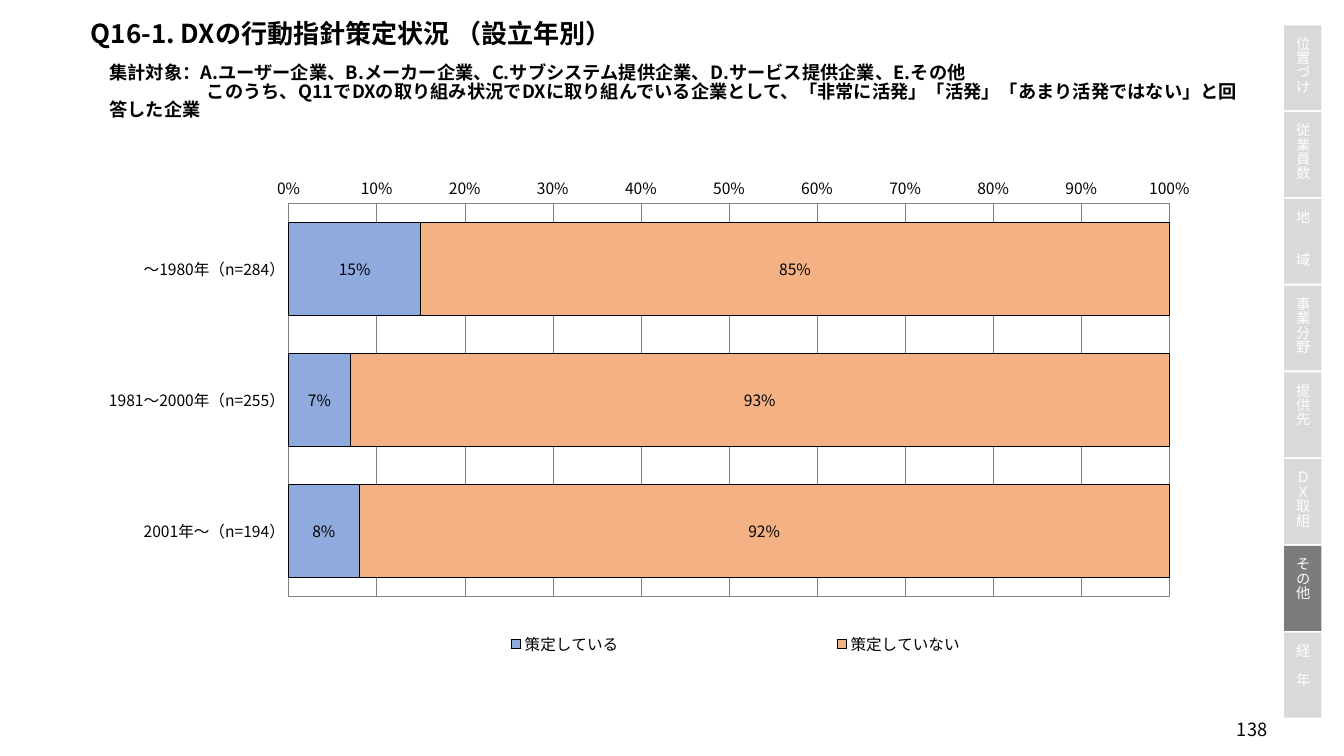
import pptx
import pptx.util
import pptx.chart.data
import pptx.dml.color
import pptx.enum.chart
import pptx.enum.shapes
import pptx.enum.text
import pptx.oxml
from lxml import etree
from pptx.oxml.ns import qn

FONT = "Noto Sans CJK JP"
In, Pt = pptx.util.Inches, pptx.util.Pt
ALIGN = pptx.enum.text.PP_ALIGN
ANCHOR = pptx.enum.text.MSO_ANCHOR
W, H = 14.35, 8.07
LEFT, BODY_W = 0.87, 12.6


def rgb(value):
    return pptx.dml.color.RGBColor.from_string(value)


def set_font(font, size, color="000000", bold=False):
    """Format Latin and East Asian text alike."""
    font.size, font.bold = Pt(size), bold
    font.color.rgb = rgb(color)
    font.name = FONT
    ea = etree.Element(qn("a:ea"), typeface=FONT)
    font._rPr.find(qn("a:latin")).addnext(ea)


def write(tf, text, size=14, color="000000", bold=False, align=ALIGN.LEFT,
          anchor=ANCHOR.TOP, spacing=None, left=0, indents=None):
    """Fill a frame, one paragraph a line; indents are first-line indents."""
    tf.word_wrap = True
    tf.vertical_anchor = anchor
    for i, line in enumerate(text.split("\n")):
        p = tf.add_paragraph() if i else tf.paragraphs[0]
        p.alignment = align
        p.line_spacing = spacing
        if indents:
            pPr = p._p.get_or_add_pPr()
            pPr.set("marL", str(In(left)))
            pPr.set("indent", str(In(indents[i])))
        r = p.add_run()
        r.text = line
        set_font(r.font, size, color, bold)


def add_text(s, box, text, **fmt):
    sp = s.shapes.add_textbox(*map(In, box))
    write(sp.text_frame, text, **fmt)


def add_side_tabs(s, box, labels, current):
    x, y, w, h = box
    gap = 0.02
    pitch = (h + gap) / len(labels)
    for i, label in enumerate(labels):
        sp = s.shapes.add_shape(pptx.enum.shapes.MSO_SHAPE.RECTANGLE, In(x),
                                In(y + i * pitch), In(w), In(pitch - gap))
        sp.shadow.inherit = False
        sp.fill.solid()
        sp.fill.fore_color.rgb = rgb("7C7C7C" if label == current else "D9D9D9")
        sp.line.fill.background()
        tf = sp.text_frame
        tf.margin_left = tf.margin_right = 0
        tf.margin_top = tf.margin_bottom = In(0.12)
        write(tf, label, size=11, color="FFFFFF", align=ALIGN.CENTER,
              anchor=ANCHOR.MIDDLE)
        tf._txBody.bodyPr.set("vert", "eaVert")


def make_layout(x, y, w, h, inner=False):
    """Manual chart layout in shares of the chart's size."""
    layout = etree.Element(qn("c:layout"))
    manual = etree.SubElement(layout, qn("c:manualLayout"))
    items = [("layoutTarget", "inner")] if inner else []
    items += [("xMode", "edge"), ("yMode", "edge"),
              ("x", x), ("y", y), ("w", w), ("h", h)]
    for tag, val in items:
        etree.SubElement(manual, qn("c:" + tag), val=str(val))
    return layout


def drop_layout(parent):
    for old in parent.findall(qn("c:layout")):
        parent.remove(old)


def set_line(line, color, width):
    line.color.rgb = rgb(color)
    line.width = Pt(width)


def add_share_chart(s, box, categories, series):
    enum = pptx.enum.chart
    data = pptx.chart.data.CategoryChartData(number_format="0%")
    data.categories = categories
    for name, _, values in series:
        data.add_series(name, values)
    chart = s.shapes.add_chart(enum.XL_CHART_TYPE.BAR_STACKED,
                               *map(In, box), data).chart
    set_font(chart.font, 12)
    chart.has_title = False

    plot = chart.plots[0]
    plot.gap_width, plot.overlap = 40, 100
    plot.vary_by_categories = False
    for ser, (_, color, _) in zip(plot.series, series):
        ser.format.fill.solid()
        ser.format.fill.fore_color.rgb = rgb(color)
        set_line(ser.format.line, "000000", 0.75)
        labels = ser.data_labels
        labels.show_value = True
        labels.number_format, labels.number_format_is_linked = "0%", False
        labels.position = enum.XL_LABEL_POSITION.CENTER
        set_font(labels.font, 12)

    cat, val = chart.category_axis, chart.value_axis
    for axis in (cat, val):
        axis.major_tick_mark = axis.minor_tick_mark = enum.XL_TICK_MARK.NONE
        set_font(axis.tick_labels.font, 12)
    cat.reverse_order = True
    set_line(cat.format.line, "808080", 1)
    val.minimum_scale, val.maximum_scale, val.major_unit = 0, 1, 0.1
    val.tick_labels.number_format = "0%"
    val.tick_labels.number_format_is_linked = False
    val.format.line.fill.background()
    val.has_major_gridlines = True
    set_line(val.major_gridlines.format.line, "808080", 0.25)

    chart.has_legend = True
    legend = chart.legend
    legend.position = enum.XL_LEGEND_POSITION.BOTTOM
    legend.include_in_layout = False
    set_font(legend.font, 12)
    drop_layout(legend._element)
    legend._element.find(qn("c:legendPos")).addnext(
        make_layout(0.19, 0.87, 0.77, 0.07))

    area = chart._chartSpace.chart.plotArea
    drop_layout(area)
    area.insert(0, make_layout(0.182, 0.087, 0.774, 0.73, inner=True))
    frame = etree.SubElement(area, qn("c:spPr"))
    etree.SubElement(frame, qn("a:noFill"))
    ln = etree.SubElement(frame, qn("a:ln"), w=str(Pt(0.75)))
    fill = etree.SubElement(ln, qn("a:solidFill"))
    etree.SubElement(fill, qn("a:srgbClr"), val="808080")


def main():
    prs = pptx.Presentation()
    prs.slide_width, prs.slide_height = In(W), In(H)
    s = prs.slides.add_slide(prs.slide_layouts[6])
    add_side_tabs(s, (13.71, 0.27, 0.4, 7.39),
                  ["位置づけ", "従業員数", "地　　域", "事業分野", "提供先",
                   "ＤＸ取組", "その他", "経　年"], "その他")
    add_text(s, (13.03, 7.65, 0.68, 0.25), "138", align=ALIGN.CENTER,
             spacing=0.85)
    add_text(s, (LEFT, 0.18, BODY_W, 0.44),
             "Q16-1. DXの行動指針策定状況 （設立年別）",
             size=20, bold=True, spacing=0.9)
    add_text(s, (LEFT, 0.65, BODY_W, 0.57),
             "集計対象：A.ユーザー企業、B.メーカー企業、C.サブシステム提供企業、"
             "D.サービス提供企業、E.その他\n"
             "このうち、Q11でDXの取り組み状況でDXに取り組んでいる企業として、"
             "「非常に活発」「活発」「あまり活発ではない」と回答した企業",
             bold=True, spacing=0.83, left=0.2, indents=[0, 1.04])
    add_share_chart(s, (LEFT, 1.67, 12.15, 5.75),
                    ["～1980年（n=284）", "1981～2000年（n=255）",
                     "2001年～（n=194）"],
                    [("策定している", "8FAADC", (0.15, 0.07, 0.08)),
                     ("策定していない", "F4B183", (0.85, 0.93, 0.92))])
    prs.save("out.pptx")


if __name__ == "__main__":
    main()
